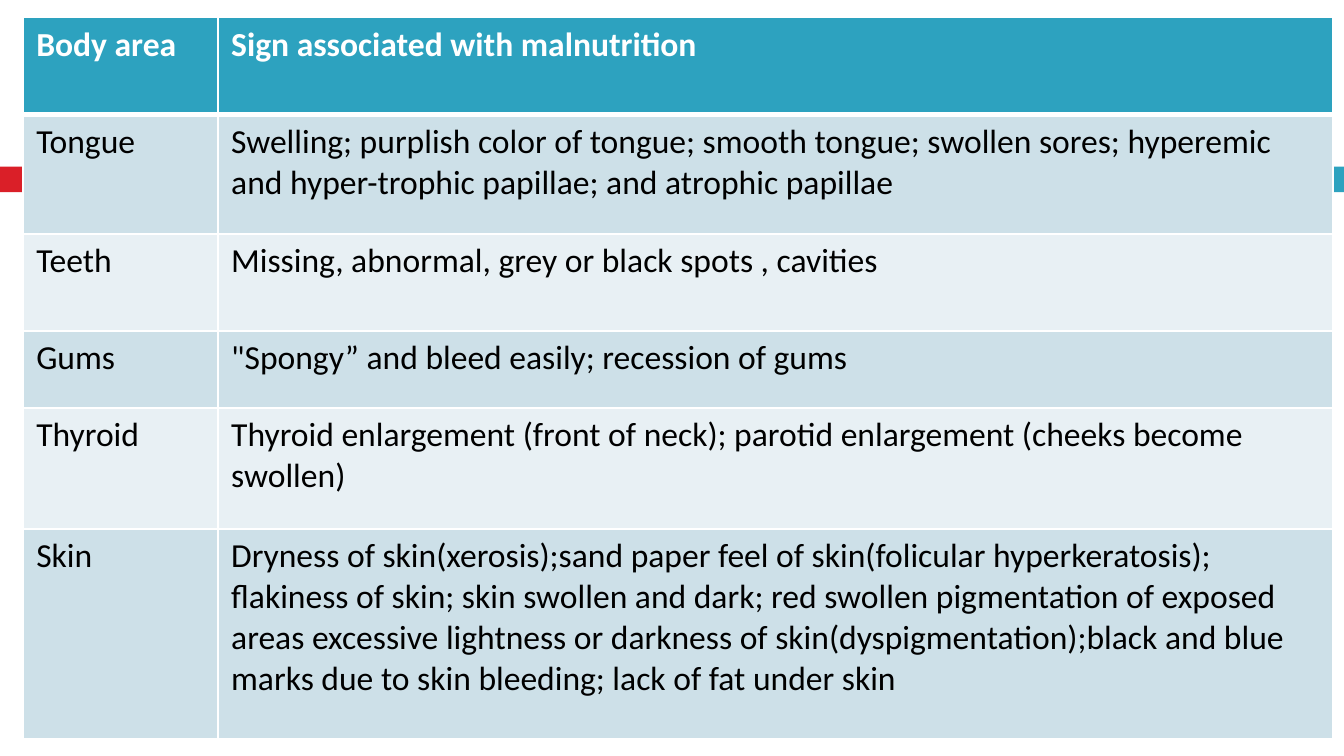
import pptx
import pptx.util
import pptx.dml.color
import pptx.enum.shapes
import pptx.oxml
import pptx.oxml.ns

COLORS = {"red": "DA1F28", "teal": "2DA2BF", "white": "FFFFFF",
          "black": "000000", "band_dark": "CDE0E8", "band_light": "E8F0F4"}
FONT, SIZE = "Calibri", 18
GRID_COLS = 1000
UNIT = pptx.util.Inches(0.01)  # side of one square grid cell

SIGNS = [
    ("Body area", "Sign associated with malnutrition"),
    ("Tongue", "Swelling; purplish color of tongue; smooth tongue; swollen sores; "
               "hyperemic and hyper-trophic papillae; and atrophic papillae"),
    ("Teeth", "Missing, abnormal, grey or black spots , cavities"),
    ("Gums", "\"Spongy” and bleed easily; recession of gums"),
    ("Thyroid", "Thyroid enlargement (front of neck); parotid enlargement "
                "(cheeks become swollen)"),
    ("Skin", "Dryness of skin(xerosis);sand paper feel of skin(folicular "
             "hyperkeratosis); flakiness of skin; skin swollen and dark; red swollen "
             "pigmentation of exposed areas excessive lightness or darkness of "
             "skin(dyspigmentation);black and blue marks due to skin bleeding; "
             "lack of fat under skin"),
]
COL_WEIGHTS = [145, 830]
ROW_WEIGHTS = [72, 89, 72, 57, 90, 156]


def rgb(name):
    return pptx.dml.color.RGBColor.from_string(COLORS[name])


def add_bar(s, left, top, width, height, color):
    bar = s.shapes.add_shape(pptx.enum.shapes.MSO_SHAPE.RECTANGLE,
                             left, top, width, height)
    bar.shadow.inherit = False
    bar.fill.solid()
    bar.fill.fore_color.rgb = rgb(color)
    bar.line.fill.background()


def add_band(s, left, top, width, height):
    """Red block, a narrow gap, then a teal strip to the right edge."""
    red_width, gap = 58 * UNIT, 7 * UNIT
    add_bar(s, left, top, red_width, height, "red")
    teal_left = left + red_width + gap
    add_bar(s, teal_left, top, left + width - teal_left, height, "teal")


def set_borders(cell, top, bottom):
    """White cell borders; the side ones are 1 pt wide."""
    tc_pr = cell._tc.get_or_add_tcPr()
    widths = {"lnL": 1, "lnR": 1, "lnT": top, "lnB": bottom}
    for i, (tag, width) in enumerate(widths.items()):
        tc_pr.insert(i, pptx.oxml.parse_xml(
            f'<a:{tag} {pptx.oxml.ns.nsdecls("a")} w="{pptx.util.Pt(width)}">'
            f'<a:solidFill><a:srgbClr val="{COLORS["white"]}"/></a:solidFill>'
            f'</a:{tag}>'))


def fill_cell(cell, text, row):
    header = row == 0
    cell.text = text
    font = cell.text_frame.paragraphs[0].font
    font.name, font.size, font.bold = FONT, pptx.util.Pt(SIZE), header
    font.color.rgb = rgb("white" if header else "black")
    cell.fill.solid()
    band = "band_dark" if row % 2 else "band_light"
    cell.fill.fore_color.rgb = rgb("teal" if header else band)
    set_borders(cell, top=3 if row == 1 else 1, bottom=3 if header else 1)


def add_signs_table(s, left, top, width, height):
    table = s.shapes.add_table(len(SIGNS), len(COL_WEIGHTS),
                               left, top, width, height).table
    for column, weight in zip(table.columns, COL_WEIGHTS):
        column.width = int(width * weight / sum(COL_WEIGHTS))
    for row, weight in zip(table.rows, ROW_WEIGHTS):
        row.height = int(height * weight / sum(ROW_WEIGHTS))
    for r, texts in enumerate(SIGNS):
        for c, text in enumerate(texts):
            fill_cell(table.cell(r, c), text, r)


def main():
    prs = pptx.Presentation()
    prs.slide_width = GRID_COLS * UNIT
    prs.slide_height = prs.slide_width * 9 // 16
    s = prs.slides.add_slide(prs.slide_layouts[6])
    # Band behind the table
    add_band(s, 0, 124 * UNIT, prs.slide_width, 19 * UNIT)
    # Table of signs by body area
    add_signs_table(s, 17 * UNIT, 13 * UNIT, 975 * UNIT, 537 * UNIT)
    prs.save("out.pptx")


if __name__ == "__main__":
    main()
